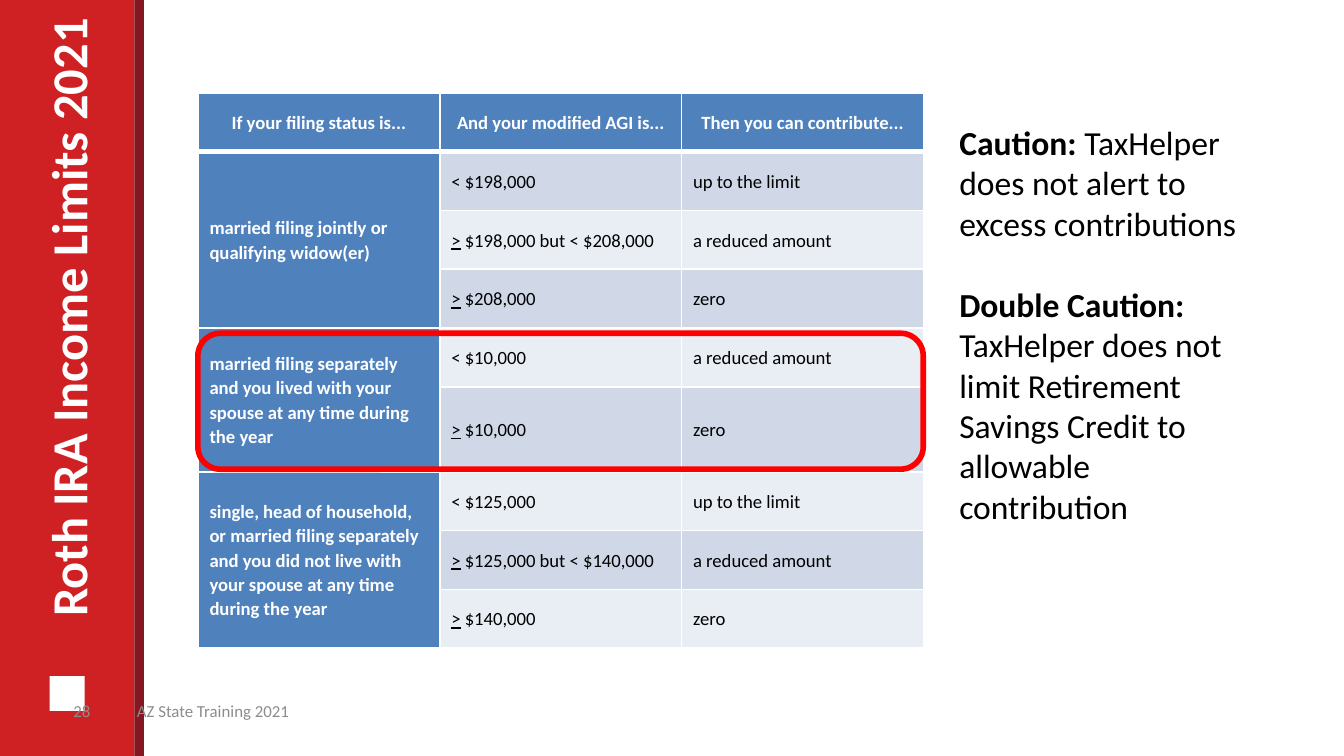
from pptx import Presentation
from pptx.dml.color import RGBColor
from pptx.enum.shapes import MSO_SHAPE as Shape
from pptx.enum.text import MSO_ANCHOR as Anchor, PP_ALIGN as Align
from pptx.oxml import parse_xml
from pptx.oxml.ns import nsdecls
from pptx.util import Cm, Pt

FONT = "Calibri"
RED = RGBColor(0xCF, 0x21, 0x24)
DARK_RED = RGBColor(0x84, 0x17, 0x21)
HIGHLIGHT = RGBColor(0xFF, 0x00, 0x00)
BLUE = RGBColor(0x4F, 0x81, 0xBD)
BANDS = (RGBColor(0xD0, 0xD8, 0xE8), RGBColor(0xE9, 0xED, 0xF4))
WHITE = RGBColor(0xFF, 0xFF, 0xFF)
BLACK = RGBColor(0x00, 0x00, 0x00)
GREY = RGBColor(0x8C, 0x8C, 0x8C)

HEADERS = ("If your filing status is...", "And your modified AGI is...",
           "Then you can contribute...")
GROUPS = (
    ("married filing jointly or qualifying widow(er)",
     (("< $198,000", "up to the limit"),
      ("> $198,000 but < $208,000", "a reduced amount"),
      ("> $208,000", "zero"))),
    ("married filing separately and you lived with your spouse at any time "
     "during the year",
     (("< $10,000", "a reduced amount"),
      ("> $10,000", "zero"))),
    ("single, head of household, or married filing separately and you did not "
     "live with your spouse at any time during the year",
     (("< $125,000", "up to the limit"),
      ("> $125,000 but < $140,000", "a reduced amount"),
      ("> $140,000", "zero"))),
)
CAUTIONS = (
    ("Caution: ", "TaxHelper does not alert to excess contributions"),
    ("Double Caution: ", "TaxHelper does not limit Retirement Savings Credit "
                         "to allowable contribution"),
)
TABLE_LEFT, TABLE_TOP = 3.74, 1.76
COLUMN_WIDTH, ROW_HEIGHT, TALL_ROW_HEIGHT = 4.57, 1.11, 1.61
TALL_ROW = 5


def add_run(paragraph, text, size, color, bold=False, underline=False):
    run = paragraph.add_run()
    run.text = text
    font = run.font
    font.name, font.size, font.bold = FONT, Pt(size), bold
    font.color.rgb = color
    if underline:
        font.underline = True


def add_block(slide, left, top, width, height, fill=None, line=None,
              preset=Shape.RECTANGLE):
    shape = slide.shapes.add_shape(preset, Cm(left), Cm(top), Cm(width), Cm(height))
    shape.shadow.inherit = False
    if fill is None:
        shape.fill.background()
    else:
        shape.fill.solid()
        shape.fill.fore_color.rgb = fill
    if line is None:
        shape.line.fill.background()
    else:
        shape.line.color.rgb = line
        shape.line.width = Pt(3)


def add_text_frame(slide, left, top, width, height):
    frame = slide.shapes.add_textbox(Cm(left), Cm(top), Cm(width), Cm(height)).text_frame
    frame.word_wrap = True
    return frame


def add_footer(slide, text, width, align):
    frame = add_text_frame(slide, 0, 13.06, width, 0.76)
    frame.vertical_anchor = Anchor.MIDDLE
    paragraph = frame.paragraphs[0]
    paragraph.alignment = align
    add_run(paragraph, text, 9, GREY)


def set_title(slide, text):
    title = slide.shapes.title
    title.left, title.top, title.width, title.height = Cm(-4.7), Cm(4.75), Cm(11.94), Cm(2.39)
    title.rotation = 270
    frame = title.text_frame
    frame.word_wrap = True
    frame.vertical_anchor = Anchor.MIDDLE
    frame.paragraphs[0].alignment = Align.LEFT
    add_run(frame.paragraphs[0], text, 27, WHITE, bold=True)


def add_cautions(slide):
    frame = add_text_frame(slide, 17.88, 2.18, 6.1, 7.95)
    for index, (label, message) in enumerate(CAUTIONS):
        paragraph = frame.add_paragraph() if index else frame.paragraphs[0]
        if index:
            paragraph.space_before = Pt(22)
        add_run(paragraph, label, 18, BLACK, bold=True)
        add_run(paragraph, message, 18, BLACK)


def format_cell(cell, fill, top=1, bottom=1):
    properties = cell._tc.get_or_add_tcPr()
    for side, width in (("L", 1), ("R", 1), ("T", top), ("B", bottom)):
        properties.append(parse_xml(
            f'<a:ln{side} {nsdecls("a")} w="{Pt(width)}"><a:solidFill>'
            f'<a:srgbClr val="{WHITE}"/></a:solidFill></a:ln{side}>'))
    cell.fill.solid()
    cell.fill.fore_color.rgb = fill
    cell.vertical_anchor = Anchor.MIDDLE
    cell.margin_left = cell.margin_right = Cm(0.22)
    cell.margin_top = cell.margin_bottom = Cm(0.22)
    paragraph = cell.text_frame.paragraphs[0]
    paragraph.line_spacing = 1.07
    return paragraph


def fill_value_cell(cell, text, fill, top):
    paragraph = format_cell(cell, fill, top)
    paragraph.space_after = Pt(6)
    if text.startswith(">"):
        add_run(paragraph, ">", 10, BLACK, underline=True)
        text = text[1:]
    add_run(paragraph, text, 10, BLACK)


def add_limits_table(slide):
    row_count = 1 + sum(len(limits) for _, limits in GROUPS)
    height = (row_count - 1) * ROW_HEIGHT + TALL_ROW_HEIGHT
    table = slide.shapes.add_table(
        row_count, len(HEADERS), Cm(TABLE_LEFT), Cm(TABLE_TOP),
        Cm(COLUMN_WIDTH * len(HEADERS)), Cm(height)).table
    for column in table.columns:
        column.width = Cm(COLUMN_WIDTH)
    for index, row in enumerate(table.rows):
        row.height = Cm(TALL_ROW_HEIGHT if index == TALL_ROW else ROW_HEIGHT)
    for column, header in enumerate(HEADERS):
        paragraph = format_cell(table.cell(0, column), BLUE, bottom=3)
        paragraph.alignment = Align.CENTER
        add_run(paragraph, header, 10, WHITE, bold=True)

    row = 1
    for status, limits in GROUPS:
        first = row
        for values in limits:
            top = 3 if row == 1 else 1
            paragraph = format_cell(table.cell(row, 0), BLUE, top)
            if row == first:
                add_run(paragraph, status, 10, WHITE, bold=True)
            for column, value in enumerate(values, 1):
                fill_value_cell(table.cell(row, column), value, BANDS[(row - 1) % 2], top)
            row += 1
        table.cell(first, 0).merge(table.cell(row - 1, 0))


def main():
    presentation = Presentation()
    presentation.slide_width, presentation.slide_height = Cm(25.4), Cm(14.29)
    slide = presentation.slides.add_slide(presentation.slide_layouts[5])
    add_block(slide, 0, 0, 2.54, 14.29, RED)
    add_block(slide, 0.94, 12.78, 0.66, 0.66, WHITE)
    add_block(slide, 2.54, 0, 0.18, 14.29, DARK_RED)
    title = slide.shapes.title._element
    title.getparent().append(title)
    set_title(slide, "Roth IRA Income Limits 2021")
    add_footer(slide, "AZ State Training 2021", 8.05, Align.CENTER)
    add_footer(slide, "28", 1.96, Align.RIGHT)
    add_cautions(slide)
    add_limits_table(slide)
    add_block(slide, TABLE_LEFT, 6.3, COLUMN_WIDTH * len(HEADERS), 2.57,
              line=HIGHLIGHT, preset=Shape.ROUNDED_RECTANGLE)
    presentation.save("out.pptx")


if __name__ == "__main__":
    main()
